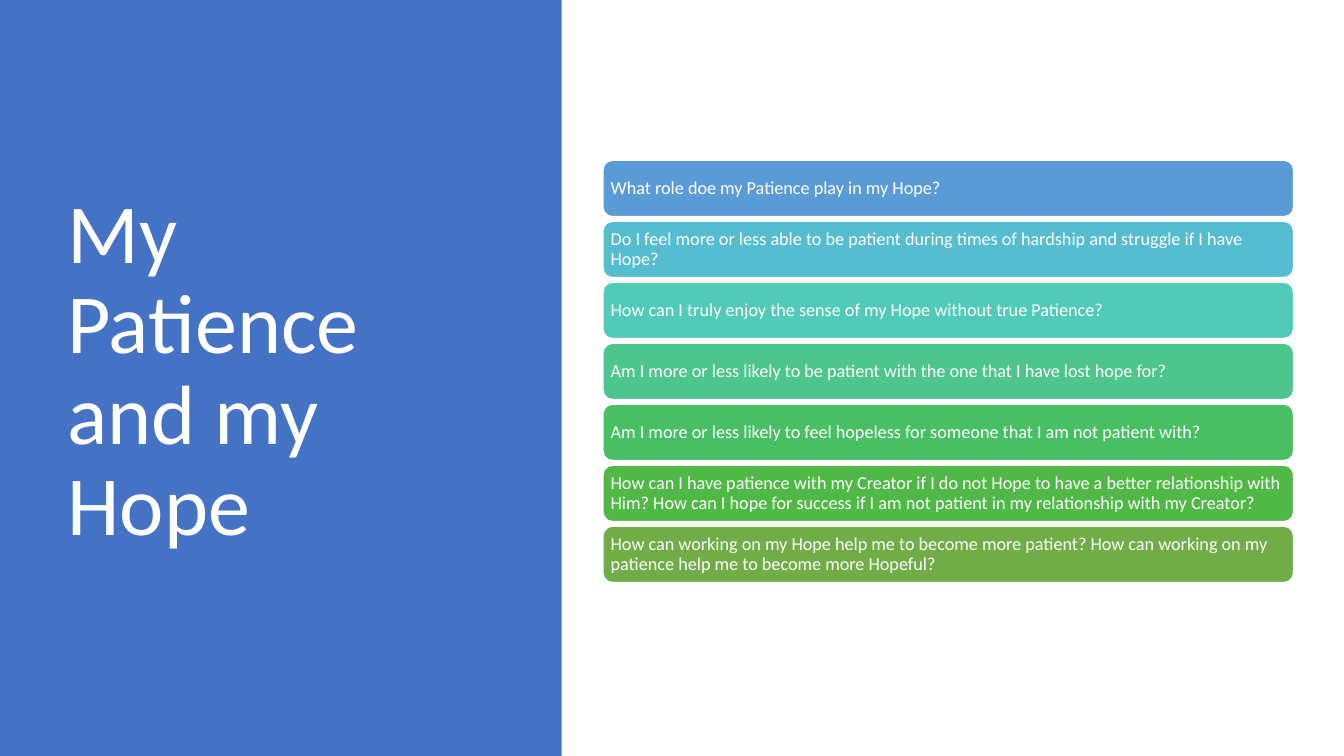
"""Build the slide on patience and hope."""
from dataclasses import dataclass

from pptx import Presentation
from pptx import util as u
from pptx.dml.color import RGBColor
from pptx.enum import shapes, text


@dataclass(frozen=True)
class Theme:
    """Hold the colours, font and type sizes."""
    font: str = "Calibri"
    white: str = "FFFFFF"
    panel: str = "4472C4"
    title: int = 60
    body: int = 13


THEME = Theme()
WIDE, HIGH = 13.33, 7.5
LEFT, TOP, PITCH = 5.98, 1.59, 0.605
CARD = (6.85, 0.56)
CARDS = [
    ("5B9BD5", "What role doe my Patience play in my Hope?"),
    ("56BCD0", "Do I feel more or less able to be patient during times of "
               "hardship and struggle if I have Hope?"),
    ("52CAB8", "How can I truly enjoy the sense of my Hope without true Patience?"),
    ("4DC58D", "Am I more or less likely to be patient with the one that I "
               "have lost hope for?"),
    ("49BF64", "Am I more or less likely to feel hopeless for someone that I "
               "am not patient with?"),
    ("50B846", "How can I have patience with my Creator if I do not Hope to "
               "have a better relationship with Him? How can I hope for success "
               "if I am not patient in my relationship with my Creator?"),
    ("70AD47", "How can working on my Hope help me to become more patient? "
               "How can working on my patience help me to become more Hopeful?"),
]


def write(shape, words, size, pad_x, pad_y):
    """Put formatted, vertically centred text in a shape."""
    frame = shape.text_frame
    frame.word_wrap = True
    frame.vertical_anchor = text.MSO_ANCHOR.MIDDLE
    frame.margin_left = frame.margin_right = u.Inches(pad_x)
    frame.margin_top = frame.margin_bottom = u.Inches(pad_y)
    para = frame.paragraphs[0]
    para.alignment = text.PP_ALIGN.LEFT
    para.line_spacing = 0.9
    run = para.add_run()
    run.text = words
    run.font.name = THEME.font
    run.font.size = u.Pt(size)
    run.font.color.rgb = RGBColor.from_string(THEME.white)


def block(slide, kind, box, fill, line=None):
    """Draw a filled shape, with an outline if a line colour is given."""
    shape = slide.shapes.add_shape(kind, *map(u.Inches, box))
    shape.shadow.inherit = False
    shape.fill.solid()
    shape.fill.fore_color.rgb = RGBColor.from_string(fill)
    if line:
        shape.line.color.rgb = RGBColor.from_string(line)
        shape.line.width = u.Pt(1)
    else:
        shape.line.fill.background()
    return shape


def panel(slide, words):
    """Draw the side panel with the title on it."""
    block(slide, shapes.MSO_SHAPE.RECTANGLE, (0, 0, 5.57, HIGH), THEME.panel)
    box = slide.shapes.add_textbox(*map(u.Inches, (0.57, 0.68, 4.16, 6.02)))
    write(box, words, size=THEME.title, pad_x=0.1, pad_y=0.05)


def card(slide, row, fill, words):
    """Draw one question card on its row."""
    box = (LEFT, TOP + row * PITCH, *CARD)
    shape = block(slide, shapes.MSO_SHAPE.ROUNDED_RECTANGLE, box, fill, THEME.white)
    write(shape, words, size=THEME.body, pad_x=0.05, pad_y=0.05)


def main():
    """Build and save the deck."""
    deck = Presentation()
    deck.slide_width, deck.slide_height = u.Inches(WIDE), u.Inches(HIGH)
    slide = deck.slides.add_slide(deck.slide_layouts[6])
    panel(slide, "My Patience and my Hope")
    for row, (fill, words) in enumerate(CARDS):
        card(slide, row, fill, words)
    deck.save("out.pptx")


if __name__ == "__main__":
    main()
